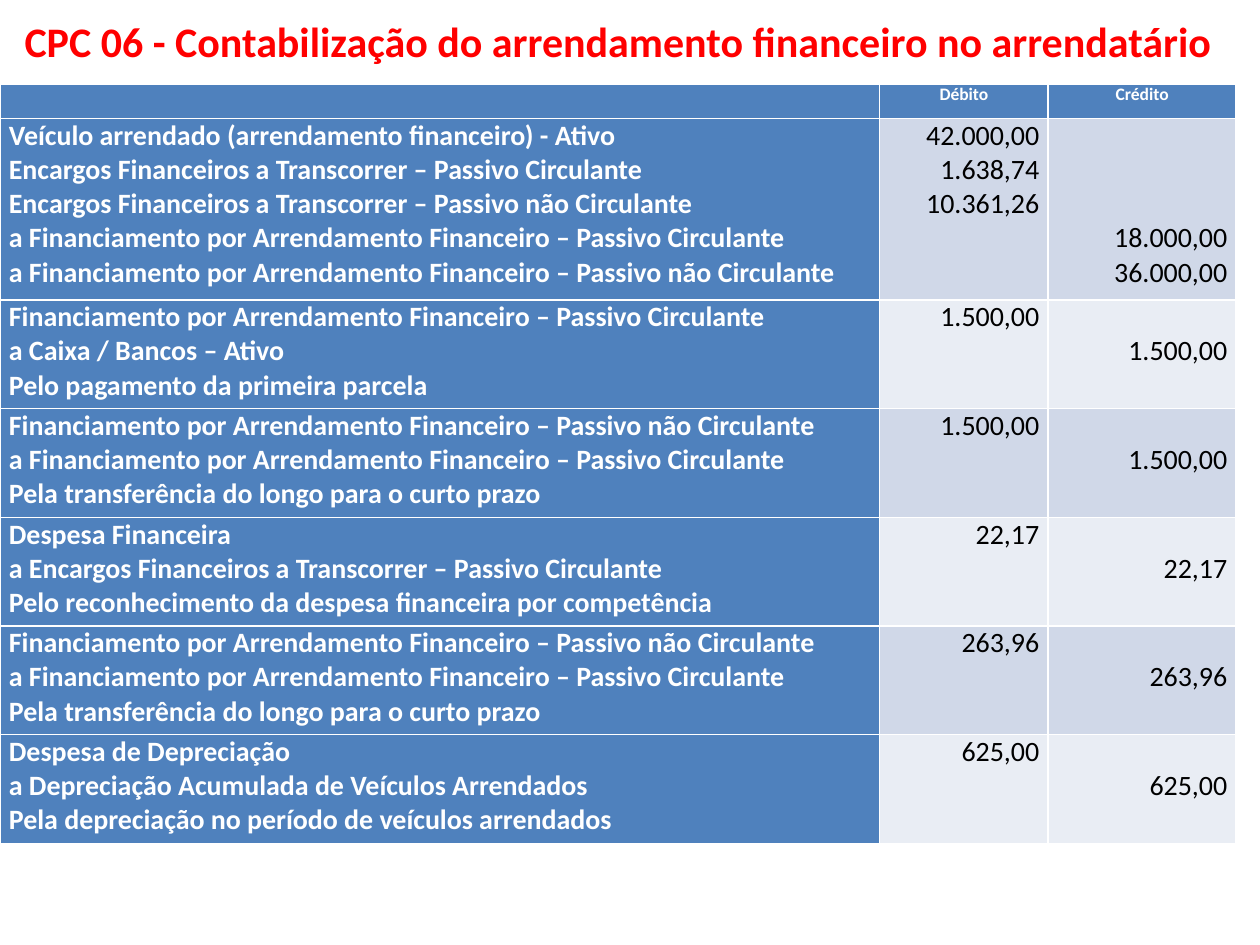
"""Build the slide on lessee accounting entries for a finance lease."""
from dataclasses import dataclass

from pptx import Presentation
from pptx.dml.color import RGBColor
from pptx.enum.text import MSO_ANCHOR, PP_ALIGN
from pptx.util import Cm, Pt

LEFT, CENTER, RIGHT = PP_ALIGN.LEFT, PP_ALIGN.CENTER, PP_ALIGN.RIGHT
MIDDLE = MSO_ANCHOR.MIDDLE
FONT = "Calibri"
COLORS = {
    "title": "FF0000",
    "head": "4F81BD",
    "head_text": "FFFFFF",
    "text": "000000",
    "odd": "D0D8E8",
    "even": "E9EDF4",
}
WIDTH = 24.92
COLUMNS = (17.73, 3.4, 3.79)
HEADER_HEIGHT, LINE_HEIGHT = 0.69, 0.69
HEADERS = ("", "Débito", "Crédito")


@dataclass
class Style:
    """Look of the text in a cell or box."""
    size: int
    color: str
    bold: bool
    align: PP_ALIGN


@dataclass
class Entry:
    """Journal entry; credits start on the line after the debits."""
    accounts: list[str]
    debits: list[str]
    credits: list[str]
    height: float = 2.19


TITLE = Style(24, "title", True, CENTER)
HEADER = Style(10, "head_text", True, CENTER)
ACCOUNT = Style(16, "head_text", True, LEFT)
AMOUNT = Style(16, "text", False, RIGHT)

LEASE = "Financiamento por Arrendamento Financeiro – Passivo"
CHARGES = "Encargos Financeiros a Transcorrer – Passivo"
TRANSFER = [f"{LEASE} não Circulante", f"a {LEASE} Circulante",
            "Pela transferência do longo para o curto prazo"]
ENTRIES = [
    Entry(["Veículo arrendado (arrendamento financeiro) - Ativo",
           f"{CHARGES} Circulante", f"{CHARGES} não Circulante",
           f"a {LEASE} Circulante", f"a {LEASE} não Circulante"],
          ["42.000,00", "1.638,74", "10.361,26"],
          ["18.000,00", "36.000,00"], 3.66),
    Entry([f"{LEASE} Circulante", "a Caixa / Bancos – Ativo",
           "Pelo pagamento da primeira parcela"],
          ["1.500,00"], ["1.500,00"]),
    Entry(TRANSFER, ["1.500,00"], ["1.500,00"]),
    Entry(["Despesa Financeira", f"a {CHARGES} Circulante",
           "Pelo reconhecimento da despesa financeira por competência"],
          ["22,17"], ["22,17"]),
    Entry(TRANSFER, ["263,96"], ["263,96"]),
    Entry(["Despesa de Depreciação",
           "a Depreciação Acumulada de Veículos Arrendados",
           "Pela depreciação no período de veículos arrendados"],
          ["625,00"], ["625,00"]),
]


def write(tf, lines: list[str], style: Style) -> None:
    """Fill a text frame with one paragraph per line."""
    tf.text = "\n".join(lines)
    for p in tf.paragraphs:
        p.alignment = style.align
        p.font.name = FONT
        p.font.size = Pt(style.size)
        p.font.bold = style.bold
        p.font.color.rgb = RGBColor.from_string(COLORS[style.color])


def fill_cell(cell, lines: list[str], style: Style, fill: str, skip: int = 0) -> None:
    """Colour a cell and write its lines below the skipped ones."""
    cell.fill.solid()
    cell.fill.fore_color.rgb = RGBColor.from_string(COLORS[fill])
    cell.margin_left = cell.margin_right = Cm(0.18)
    cell.margin_top = Cm(skip * LINE_HEIGHT)
    cell.margin_bottom = 0
    write(cell.text_frame, lines, style)


def add_title(slide, text: str) -> None:
    """Add the centred heading."""
    tf = slide.shapes.add_textbox(0, 0, Cm(WIDTH), Cm(1.63)).text_frame
    tf.word_wrap = True
    tf.vertical_anchor = MIDDLE
    write(tf, [text], TITLE)


def add_journal(slide, entries: list[Entry]) -> None:
    """Add the table of journal entries."""
    heights = [HEADER_HEIGHT] + [entry.height for entry in entries]
    table = slide.shapes.add_table(len(heights), len(COLUMNS), 0, Cm(1.7),
                                   Cm(WIDTH), Cm(sum(heights))).table
    table.first_col = True
    for column, width in zip(table.columns, COLUMNS):
        column.width = Cm(width)
    for row, height in zip(table.rows, heights):
        row.height = Cm(height)
    for col, text in enumerate(HEADERS):
        fill_cell(table.cell(0, col), [text], HEADER, "head")
    blank = table.cell(0, 0).text_frame.paragraphs[0]
    blank._p.get_or_add_endParaRPr().set("sz", str(HEADER.size * 100))
    for row, entry in enumerate(entries, 1):
        band = "odd" if row % 2 else "even"
        fill_cell(table.cell(row, 0), entry.accounts, ACCOUNT, "head")
        fill_cell(table.cell(row, 1), entry.debits, AMOUNT, band)
        fill_cell(table.cell(row, 2), entry.credits, AMOUNT, band, len(entry.debits))


def main() -> None:
    """Build and save the slide."""
    prs = Presentation()
    prs.slide_width, prs.slide_height = Cm(25.4), Cm(19.05)
    slide = prs.slides.add_slide(prs.slide_layouts[6])
    add_title(slide, "CPC 06 - Contabilização do arrendamento financeiro no arrendatário")
    add_journal(slide, ENTRIES)
    prs.save("out.pptx")


if __name__ == "__main__":
    main()
